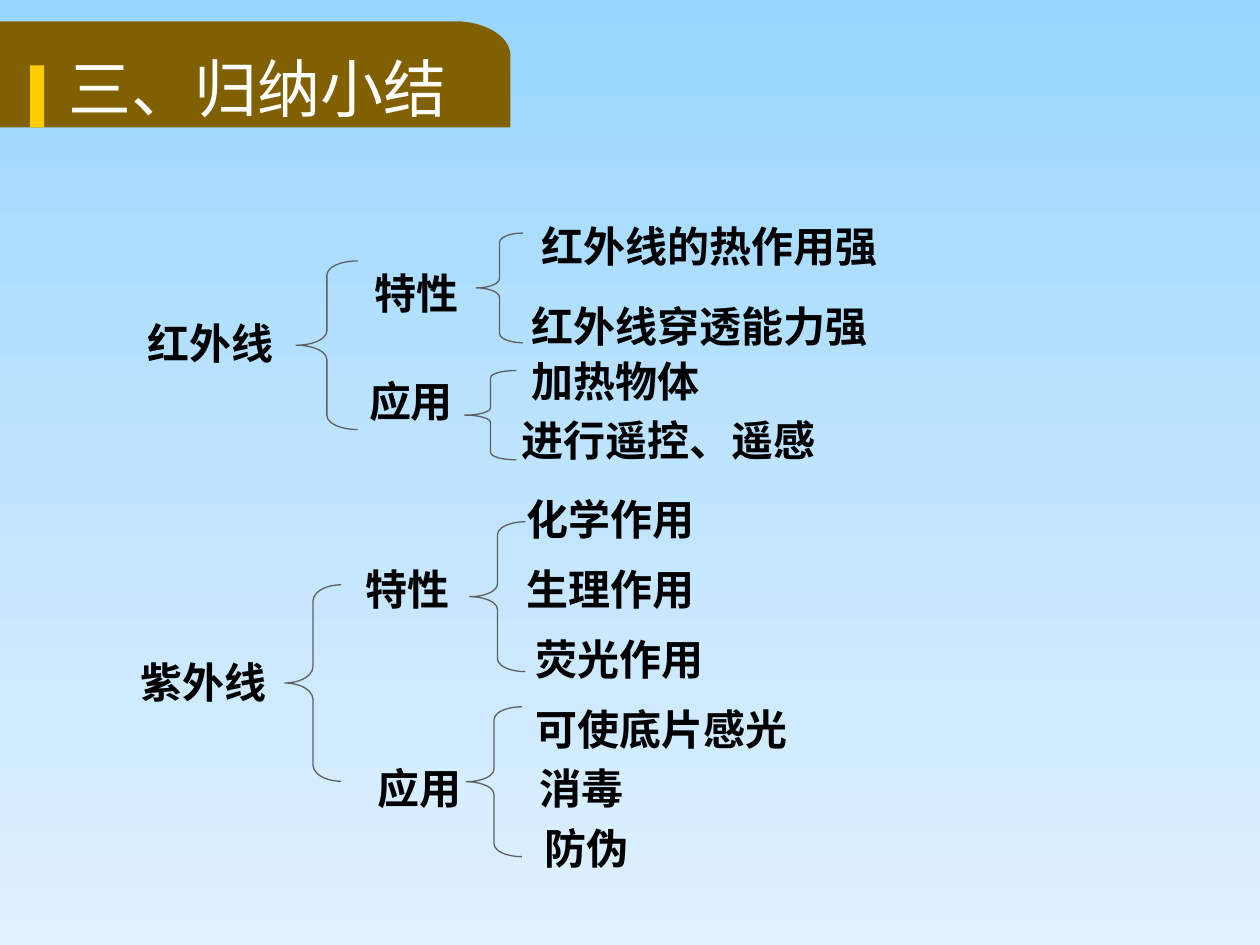
from copy import deepcopy
from math import cos, pi, sin

from pptx import Presentation
from pptx.dml.color import RGBColor
from pptx.enum.shapes import MSO_SHAPE as Shape
from pptx.enum.text import MSO_ANCHOR as Anchor, MSO_AUTO_SIZE as AutoSize, PP_ALIGN as Align
from pptx.oxml.ns import qn
from pptx.util import Cm, Pt

FONT = "Noto Sans CJK SC"
BLACK = RGBColor(0x00, 0x00, 0x00)
WHITE = RGBColor(0xFF, 0xFF, 0xFF)
BROWN = RGBColor(0x80, 0x60, 0x00)
YELLOW = RGBColor(0xFF, 0xCC, 0x00)
GREY = RGBColor(0x5F, 0x5F, 0x5F)
SKY = [(0, RGBColor(0x97, 0xD6, 0xFF)),
       (0.5, RGBColor(0xBF, 0xE4, 0xFF)),
       (1, RGBColor(0xDF, 0xF1, 0xFF))]

TITLE_FORMAT = {"size": Pt(36), "bold": False, "name": FONT}
LABEL_FORMAT = {"size": Pt(24), "bold": True, "name": FONT}
LABEL_HEIGHT = 1.27

# Text, left, top, width in centimetres
ROOTS = [("红外线", 2.72, 6.27, 4.19), ("紫外线", 2.59, 13.11, 4.19)]
TRAITS = [("特性", 6.2, 5.26, 4.39), ("特性", 6.02, 11.23, 4.39)]
USES = [("应用", 7.19, 7.44, 3), ("应用", 7.37, 15.24, 3)]
DETAILS = [
    ("红外线的热作用强", 10.67, 4.32, 8.99),
    ("红外线穿透能力强", 10.46, 5.94, 7.39),
    ("加热物体", 10.46, 7.04, 4.8),
    ("进行遥控、遥感", 10.26, 8.23, 6.81),
    ("化学作用", 10.36, 9.83, 6.6),
    ("生理作用", 10.36, 11.23, 6.6),
    ("荧光作用", 10.54, 12.65, 6.6),
    ("可使底片感光", 10.54, 14.05, 8.81),
    ("消毒", 10.62, 15.24, 4.45),
    ("防伪", 10.72, 16.46, 4.45),
]
# Left, top, width, height in centimetres, then the curve of the ends
BRACES = [
    (5.97, 5.26, 1.24, 3.4, 0.23),
    (9.6, 4.7, 0.94, 2.21, 0.2),
    (9.37, 7.47, 1.04, 1.8, 0.14),
    (5.74, 11.79, 1.14, 3.96, 0.29),
    (9.47, 10.52, 1.12, 3.02, 0.23),
    (9.4, 14.25, 1.12, 3.02, 0.23),
]


def paint_background(page):
    fill = page.background.fill
    fill.gradient()
    fill.gradient_angle = 270
    first = fill.gradient_stops[0]._gs
    first.addnext(deepcopy(first))
    for stop, (position, color) in zip(fill.gradient_stops, SKY):
        stop.position = position
        stop.color.rgb = color


def fill_plain(shape, color):
    shape.shadow.inherit = False
    shape.fill.solid()
    shape.fill.fore_color.rgb = color
    shape.line.fill.background()


def add_banner(page):
    """Draw the title band, whose top right corner is a quarter ellipse."""
    left, top, right, bottom = -0.08, 0.43, 10.29, 2.57
    radius_x, radius_y, steps = 1.12, 0.69, 24
    angles = [pi / 2 * step / steps for step in range(steps + 1)]
    corner = [(right - radius_x + radius_x * sin(angle),
               top + radius_y - radius_y * cos(angle)) for angle in angles]
    points = corner + [(right, bottom), (left, bottom)]
    builder = page.shapes.build_freeform(Cm(left), Cm(top))
    builder.add_line_segments([(Cm(x), Cm(y)) for x, y in points], close=True)
    fill_plain(builder.convert_to_shape(), BROWN)


def add_marker(page):
    box = (Cm(0.61), Cm(1.32), Cm(0.28), Cm(1.25))
    fill_plain(page.shapes.add_shape(Shape.RECTANGLE, *box), YELLOW)


def write_text(shape, text, font_format, color, align):
    frame = shape.text_frame
    frame.word_wrap = True
    frame.vertical_anchor = Anchor.TOP
    para = frame.paragraphs[0]
    para.alignment = align
    span = para.add_run()
    span.text = text
    for name, value in font_format.items():
        setattr(span.font, name, value)
    span.font.color.rgb = color
    east_asian = span.font._element.makeelement(qn("a:ea"), {"typeface": FONT})
    span.font._element.find(qn("a:latin")).addnext(east_asian)
    return para


def place_title(page):
    title = page.shapes.title
    page.shapes._spTree.append(title._element)  # bring in front of the banner
    box = {"left": Cm(1.12), "top": Cm(1.04), "width": Cm(9.47), "height": Cm(1.83)}
    for name, value in box.items():
        setattr(title, name, value)
    para = write_text(title, "三、归纳小结", TITLE_FORMAT, WHITE, Align.LEFT)
    para.line_spacing = 0.9
    title.text_frame.auto_size = AutoSize.NONE


def add_label(page, text, left, top, width, align=Align.LEFT):
    box = page.shapes.add_textbox(Cm(left), Cm(top), Cm(width), Cm(LABEL_HEIGHT))
    write_text(box, text, LABEL_FORMAT, BLACK, align)
    box.text_frame.auto_size = AutoSize.SHAPE_TO_FIT_TEXT


def add_brace(page, left, top, width, height, curve):
    brace = page.shapes.add_shape(Shape.LEFT_BRACE, Cm(left), Cm(top), Cm(width), Cm(height))
    brace.shadow.inherit = False
    brace.adjustments[0] = curve
    brace.fill.background()
    brace.line.color.rgb = GREY
    brace.line.width = Pt(0.75)


def main():
    deck = Presentation()
    deck.slide_width, deck.slide_height = Cm(25.4), Cm(19.05)
    page = deck.slides.add_slide(deck.slide_layouts[5])
    paint_background(page)
    add_banner(page)
    add_marker(page)
    place_title(page)
    for brace in BRACES:
        add_brace(page, *brace)
    for label in ROOTS + USES + DETAILS:
        add_label(page, *label)
    for label in TRAITS:
        add_label(page, *label, align=Align.CENTER)
    deck.save("out.pptx")


if __name__ == "__main__":
    main()
